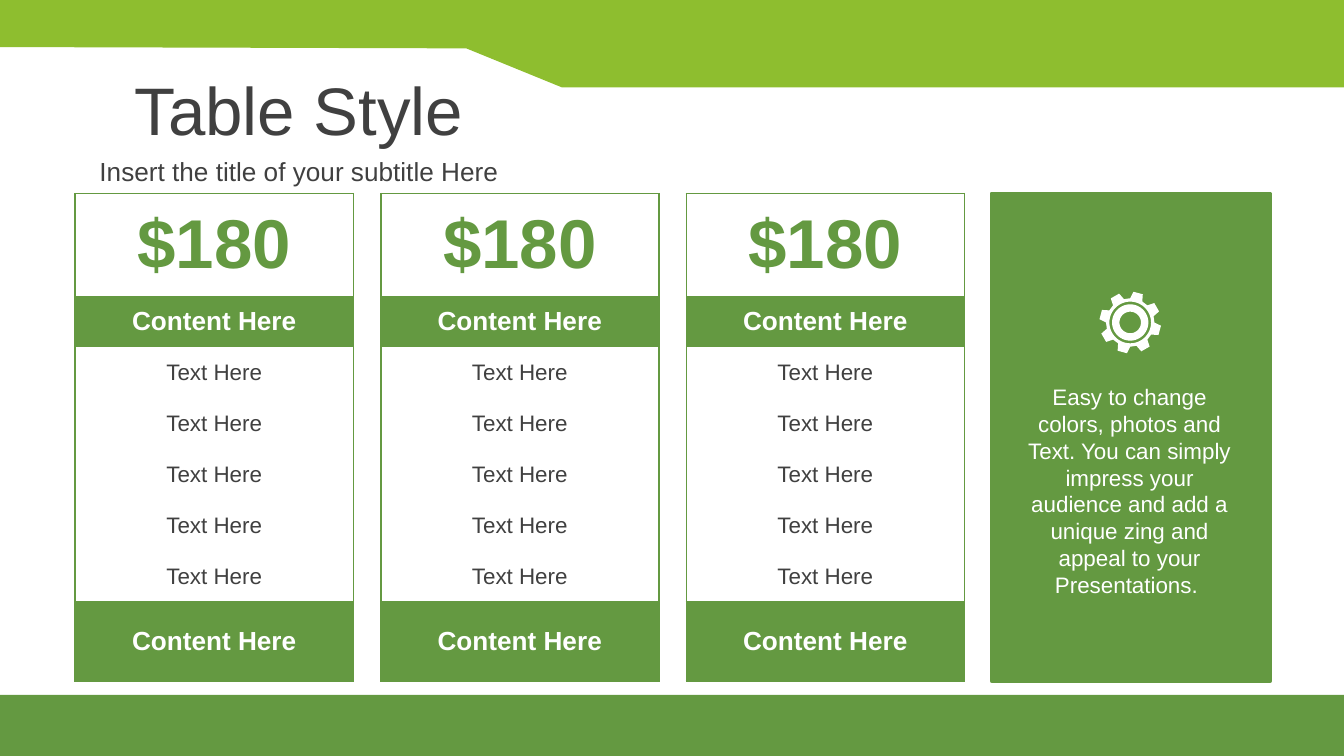
from dataclasses import dataclass
from math import cos, radians, sin

from lxml import etree
from pptx import Presentation
from pptx.dml.color import RGBColor
from pptx.enum.shapes import MSO_SHAPE
from pptx.enum.text import MSO_ANCHOR, MSO_AUTO_SIZE, PP_ALIGN
from pptx.oxml.ns import qn
from pptx.util import Inches, Pt

RECTANGLE = MSO_SHAPE.RECTANGLE
MIDDLE = MSO_ANCHOR.MIDDLE
CENTER = PP_ALIGN.CENTER
NO_AUTOFIT = MSO_AUTO_SIZE.NONE

GREEN = RGBColor(0x64, 0x99, 0x41)
LIME = RGBColor(0x8E, 0xBE, 0x2F)
WHITE = RGBColor(0xFF, 0xFF, 0xFF)
DARK = RGBColor(0x40, 0x40, 0x40)

SLIDE_WIDTH = 10
SLIDE_HEIGHT = SLIDE_WIDTH * 9 / 16
FOOTER_TOP = 5.17
CARD_LEFT, CARD_TOP, CARD_WIDTH, CARD_HEIGHT = 0.56, 1.44, 2.07, 3.63
PANEL_LEFT = 7.38
PRICE_CARDS = 3
CARD_PITCH = (PANEL_LEFT - CARD_LEFT) / PRICE_CARDS
COLUMN_WIDTHS = (0.24, 1.59, 0.24)


@dataclass(frozen=True)
class Box:
    left: float
    top: float
    width: float
    height: float

    def lengths(self) -> tuple:
        return tuple(Inches(v) for v in (self.left, self.top, self.width, self.height))


@dataclass(frozen=True)
class PriceRow:
    text: str
    height: float
    size: int
    color: RGBColor
    fill: RGBColor
    bold: bool = False
    merged: bool = False


PRICE_ROWS = [
    PriceRow("$180", 0.76, 37, GREEN, WHITE, bold=True),
    PriceRow("Content Here", 0.38, 14, WHITE, GREEN, bold=True),
    *[PriceRow("Text Here", 0.38, 12, DARK, WHITE)] * 5,
    PriceRow("Content Here", 0.59, 14, WHITE, GREEN, bold=True, merged=True),
]


def write_text(frame, text: str, size: int, color: RGBColor, bold: bool = False) -> None:
    paragraph = frame.paragraphs[0]
    paragraph.alignment = CENTER
    run = paragraph.add_run()
    run.text = text
    for name, value in {"name": "Arial", "size": Pt(size), "bold": bold}.items():
        setattr(run.font, name, value)
    run.font.color.rgb = color


def paint(shape, color: RGBColor) -> None:
    shape.shadow.inherit = False
    shape.fill.solid()
    shape.fill.fore_color.rgb = color
    shape.line.fill.background()


def fill_heading(placeholder, box: Box, text: str, size: int) -> None:
    position = dict(zip(("left", "top", "width", "height"), box.lengths()))
    for name, value in position.items():
        setattr(placeholder, name, value)
    frame = placeholder.text_frame
    layout = {"vertical_anchor": MIDDLE, "auto_size": NO_AUTOFIT, "word_wrap": True}
    for name, value in layout.items():
        setattr(frame, name, value)
    write_text(frame, text, size, DARK)


def add_rectangle(shapes, box: Box, color: RGBColor):
    rectangle = shapes.add_shape(RECTANGLE, *box.lengths())
    paint(rectangle, color)
    return rectangle


def add_outline(shapes, contours: list, color: RGBColor) -> None:
    """Draw one filled shape; inner contours cut holes."""
    first, *holes = [[(Inches(x), Inches(y)) for x, y in contour]
                     for contour in contours]
    builder = shapes.build_freeform(*first[0])
    builder.add_line_segments(first[1:], close=True)
    for hole in holes:
        builder.move_to(*hole[0])
        builder.add_line_segments(hole[1:], close=True)
    paint(builder.convert_to_shape(), color)


def set_borders(cell, green_sides: str) -> None:
    properties = cell._tc.get_or_add_tcPr()
    for index, side in enumerate("LRTB"):
        line = etree.Element(qn(f"a:ln{side}"), w=str(Pt(1)))
        if side in green_sides:
            fill = etree.SubElement(line, qn("a:solidFill"))
            etree.SubElement(fill, qn("a:srgbClr"), val=str(GREEN))
        else:
            etree.SubElement(line, qn("a:noFill"))
        properties.insert(index, line)


def add_price_table(shapes, box: Box) -> None:
    table = shapes.add_table(
        len(PRICE_ROWS), len(COLUMN_WIDTHS), *box.lengths()).table
    table.first_row = table.horz_banding = False
    for column, width in zip(table.columns, COLUMN_WIDTHS):
        column.width = Inches(width)

    last_row, last_column = len(PRICE_ROWS) - 1, len(COLUMN_WIDTHS) - 1
    for r, row in enumerate(PRICE_ROWS):
        table.rows[r].height = Inches(row.height)
        for c in range(len(COLUMN_WIDTHS)):
            cell = table.cell(r, c)
            cell.fill.solid()
            cell.fill.fore_color.rgb = row.fill
            cell.vertical_anchor = MIDDLE
            # Empty side cells need no margins, so the rows keep their height
            if c != 1 and not row.merged:
                cell.margin_top = cell.margin_bottom = 0
            edges = {"L": c == 0, "R": c == last_column,
                     "T": r in (0, last_row), "B": r >= last_row - 1}
            set_borders(cell, "LRTB" if row.merged else
                        "".join(side for side, drawn in edges.items() if drawn))
        if row.merged:
            table.cell(r, 0).merge(table.cell(r, last_column))
        text_cell = table.cell(r, 0 if row.merged else 1)
        write_text(text_cell.text_frame, row.text, row.size, row.color, row.bold)


def add_gear(shapes, center_x: float, center_y: float) -> None:
    def point(radius: float, degrees: float) -> tuple:
        angle = radians(degrees)
        return center_x + radius * sin(angle), center_y - radius * cos(angle)

    tooth = ((0.18, -15), (0.23, -9), (0.23, 9), (0.18, 15))
    teeth = [point(radius, middle + offset)
             for middle in range(15, 375, 45) for radius, offset in tooth]
    rings = [[point(radius, degrees) for degrees in range(0, 360, 6)]
             for radius in (0.155, 0.135, 0.08)]
    add_outline(shapes, [teeth, *rings], WHITE)


def main() -> None:
    presentation = Presentation()
    presentation.slide_width = Inches(SLIDE_WIDTH)
    presentation.slide_height = Inches(SLIDE_HEIGHT)
    slide = presentation.slides.add_slide(presentation.slide_layouts[0])
    shapes = slide.shapes

    # Banner and footer
    banner = [(0, -0.03), (10, -0.03), (10, 0.65), (4.18, 0.65), (3.47, 0.36), (0, 0.35)]
    add_outline(shapes, [banner], LIME)
    add_rectangle(
        shapes, Box(0, FOOTER_TOP, SLIDE_WIDTH, SLIDE_HEIGHT - FOOTER_TOP), GREEN)

    # Title and subtitle
    fill_heading(shapes.title, Box(0, 0.49, 4.45, 0.63), "Table Style", 36)
    fill_heading(slide.placeholders[1], Box(0, 1.12, 4.45, 0.31),
                 "Insert the title of your subtitle Here", 14)

    # Price tables
    for index in range(PRICE_CARDS):
        left = CARD_LEFT + index * CARD_PITCH
        add_price_table(shapes, Box(left, CARD_TOP, CARD_WIDTH, CARD_HEIGHT))

    # Side panel with gear and message
    panel = add_rectangle(
        shapes, Box(PANEL_LEFT, CARD_TOP, CARD_WIDTH, CARD_HEIGHT), GREEN)
    panel.line.color.rgb = GREEN
    panel.line.width = Pt(2)
    add_gear(shapes, 8.41, 2.4)
    message = shapes.add_textbox(*Box(7.5, 2.79, 1.81, 1.72).lengths()).text_frame
    message.word_wrap = True
    message.vertical_anchor = MIDDLE
    write_text(message, "Easy to change colors, photos and Text. You can simply "
               "impress your audience and add a unique zing and appeal to your "
               "Presentations. ", 12, WHITE)

    presentation.save("out.pptx")


if __name__ == "__main__":
    main()
